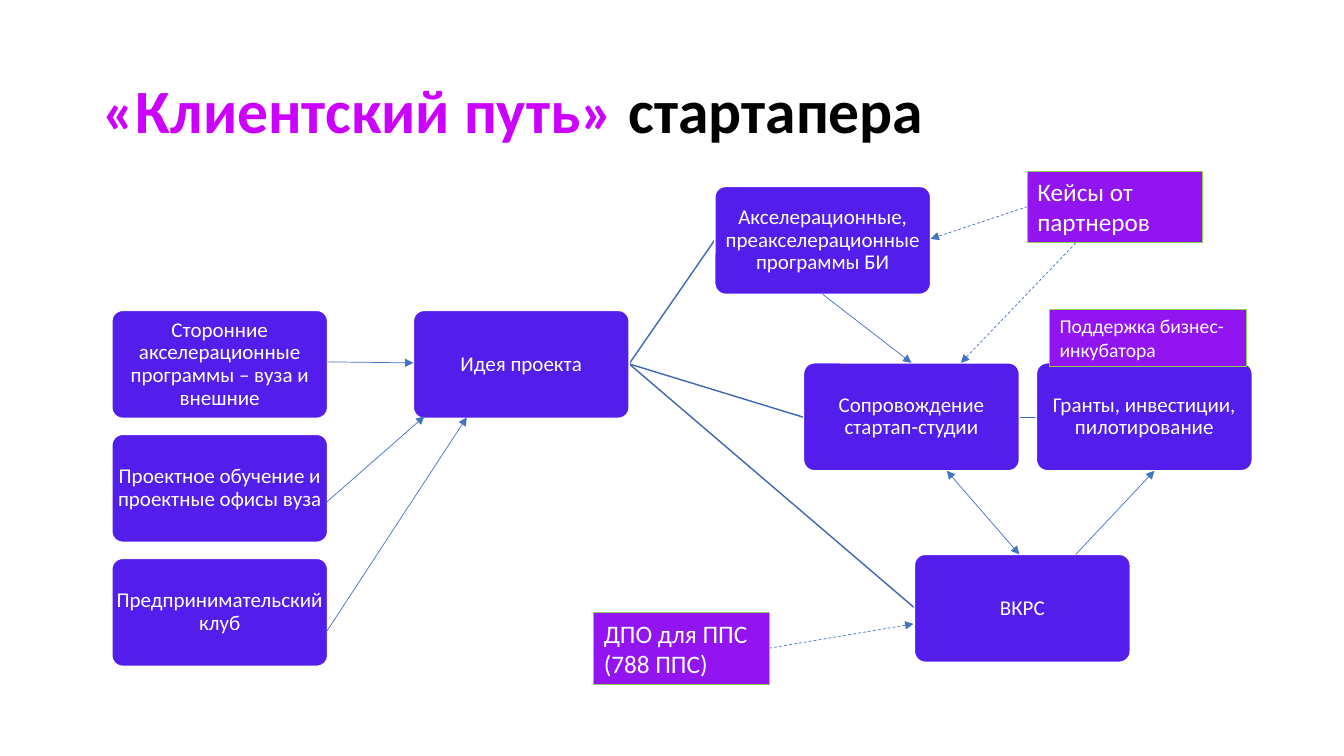
"""Build a slide that maps a startup founder's path through a university."""
from lxml import etree
from pptx import Presentation
from pptx import util as u
from pptx.dml.color import RGBColor
from pptx.enum import dml, shapes, text
from pptx.oxml import ns

WHITE = RGBColor(0xFF, 0xFF, 0xFF)
BLACK = RGBColor(0x00, 0x00, 0x00)
MAGENTA = RGBColor(0xCC, 0x00, 0xFF)
INDIGO = RGBColor(0x53, 0x1D, 0xEB)
VIOLET = RGBColor(0x92, 0x14, 0xF0)
GREEN = RGBColor(0x92, 0xD0, 0x50)
ARROW_BLUE = RGBColor(0x44, 0x72, 0xC4)
LINK_BLUE = RGBColor(0x3E, 0x67, 0xB2)

FONT = "Calibri"
STEP_WIDTH, STEP_HEIGHT = 2.14, 1.07
SOURCE_LEFT, SOURCE_TOP, SOURCE_PITCH = 1.11, 3.08, 1.23

SOURCES = [
    "Сторонние акселерационные программы – вуза и внешние",
    "Проектное обучение и проектные офисы вуза",
    "Предпринимательский клуб",
]
STEPS = [
    ("Идея проекта", 4.1, 3.08),
    ("Акселерационные, преакселерационные программы БИ", 7.09, 1.85),
    ("Сопровождение стартап-студии", 7.97, 3.6),
    ("Гранты, инвестиции, пилотирование", 10.28, 3.6),
    ("ВКРС", 9.07, 5.5),
]
LINKS = [
    ((6.24, 3.61), (7.09, 2.38)),
    ((6.24, 3.61), (7.97, 4.14)),
    ((6.24, 3.61), (9.07, 6.03)),
    ((10.11, 4.14), (10.28, 4.14)),
]
ARROWS = [
    ((3.23, 4.99), (4.21, 4.13)),
    ((3.23, 6.28), (4.63, 4.14)),
    ((3.23, 3.59), (4.1, 3.6)),
    ((8.16, 2.92), (9.04, 3.6)),
    ((10.67, 5.5), (11.45, 4.67)),
]
TWO_WAY_ARROW = ((9.39, 4.67), (10.11, 5.5))
DASHED_ARROWS = [
    ((7.63, 6.43), (9.06, 6.19)),
    ((10.19, 2.05), (9.23, 2.37)),
    ((10.67, 2.41), (9.53, 3.6)),
]
LABELS = [
    ("ДПО для ППС (788 ППС)", (5.89, 6.08, 1.74, 0.71), 18),
    ("Кейсы от партнеров", (10.19, 1.7, 1.74, 0.71), 18),
    ("Поддержка бизнес-инкубатора", (10.41, 3.07, 1.95, 0.57), 14),
]

STEP_FRAME = {
    "word_wrap": True,
    "vertical_anchor": text.MSO_ANCHOR.MIDDLE,
    **{f"margin_{side}": u.Inches(0) for side in ("left", "top", "right", "bottom")},
}
STEP_PARAGRAPH = {"alignment": text.PP_ALIGN.CENTER, "line_spacing": 0.9}
LABEL_FRAME = {"word_wrap": True, "vertical_anchor": text.MSO_ANCHOR.TOP}
LABEL_PARAGRAPH = {"alignment": text.PP_ALIGN.LEFT}
TITLE_FRAME = {"word_wrap": True, "vertical_anchor": text.MSO_ANCHOR.MIDDLE}
TITLE_PARAGRAPH = {"alignment": text.PP_ALIGN.LEFT, "line_spacing": 0.9}


def apply_format(target, values):
    """Set every attribute named in the dict."""
    for name, value in values.items():
        setattr(target, name, value)


def write_text(shape, runs, size, frame_format, paragraph_format, bold=False):
    """Write coloured runs as one formatted paragraph."""
    apply_format(shape.text_frame, frame_format)
    paragraph = shape.text_frame.paragraphs[0]
    apply_format(paragraph, paragraph_format)
    for wording, color in runs:
        run = paragraph.add_run()
        run.text = wording
        apply_format(run.font, {"name": FONT, "size": u.Pt(size), "bold": bold})
        run.font.color.rgb = color


def add_title(slide):
    """Place the two-colour heading in the title placeholder."""
    title = slide.shapes.title
    place = zip(("left", "top", "width", "height"), (0.92, 0.4, 11.5, 1.45))
    apply_format(title, {name: u.Inches(value) for name, value in place})
    runs = [("«Клиентский путь» ", MAGENTA), ("стартапера", BLACK)]
    write_text(title, runs, 44, TITLE_FRAME, TITLE_PARAGRAPH, bold=True)


def add_box(slide, kind, place, fill, outline, outline_width):
    """Add a filled and outlined shape without a shadow."""
    box = slide.shapes.add_shape(kind, *map(u.Inches, place))
    box.shadow.inherit = False
    box.fill.solid()
    box.fill.fore_color.rgb = fill
    box.line.color.rgb = outline
    box.line.width = u.Pt(outline_width)
    return box


def add_step(slide, wording, left, top):
    """Add a rounded step of the path."""
    place = (left, top, STEP_WIDTH, STEP_HEIGHT)
    step = add_box(slide, shapes.MSO_SHAPE.ROUNDED_RECTANGLE, place, INDIGO, WHITE, 1)
    step.adjustments[0] = 0.1
    write_text(step, [(wording, WHITE)], 15, STEP_FRAME, STEP_PARAGRAPH)


def add_label(slide, wording, place, size):
    """Add a rectangular support label."""
    label = add_box(slide, shapes.MSO_SHAPE.RECTANGLE, place, VIOLET, GREEN, 0.75)
    write_text(label, [(wording, WHITE)], size, LABEL_FRAME, LABEL_PARAGRAPH)


def add_line(slide, start, end, color=ARROW_BLUE, width=0.5, heads=("tailEnd",), dash=None):
    """Add a straight line with optional arrowheads and dashes."""
    line = slide.shapes.add_connector(
        shapes.MSO_CONNECTOR.STRAIGHT, *map(u.Inches, start + end))
    line.line.color.rgb = color
    apply_format(line.line, {"width": u.Pt(width), "dash_style": dash})
    outline = line.line._get_or_add_ln()
    for head in heads:
        etree.SubElement(outline, ns.qn(f"a:{head}"), type="triangle")
    etree.SubElement(line._element.spPr, ns.qn("a:effectLst"))


def main():
    """Build and save the slide."""
    presentation = Presentation()
    presentation.slide_width = u.Inches(13.33)
    presentation.slide_height = u.Inches(7.5)
    slide = presentation.slides.add_slide(presentation.slide_layouts[5])
    add_title(slide)
    for start, end in LINKS:
        add_line(slide, start, end, LINK_BLUE, 1, heads=())
    for row, wording in enumerate(SOURCES):
        add_step(slide, wording, SOURCE_LEFT, SOURCE_TOP + row * SOURCE_PITCH)
    for step in STEPS:
        add_step(slide, *step)
    for start, end in ARROWS:
        add_line(slide, start, end)
    add_line(slide, *TWO_WAY_ARROW, heads=("headEnd", "tailEnd"))
    for start, end in DASHED_ARROWS:
        add_line(slide, start, end, dash=dml.MSO_LINE.DASH)
    for label in LABELS:
        add_label(slide, *label)
    presentation.save("out.pptx")


if __name__ == "__main__":
    main()
